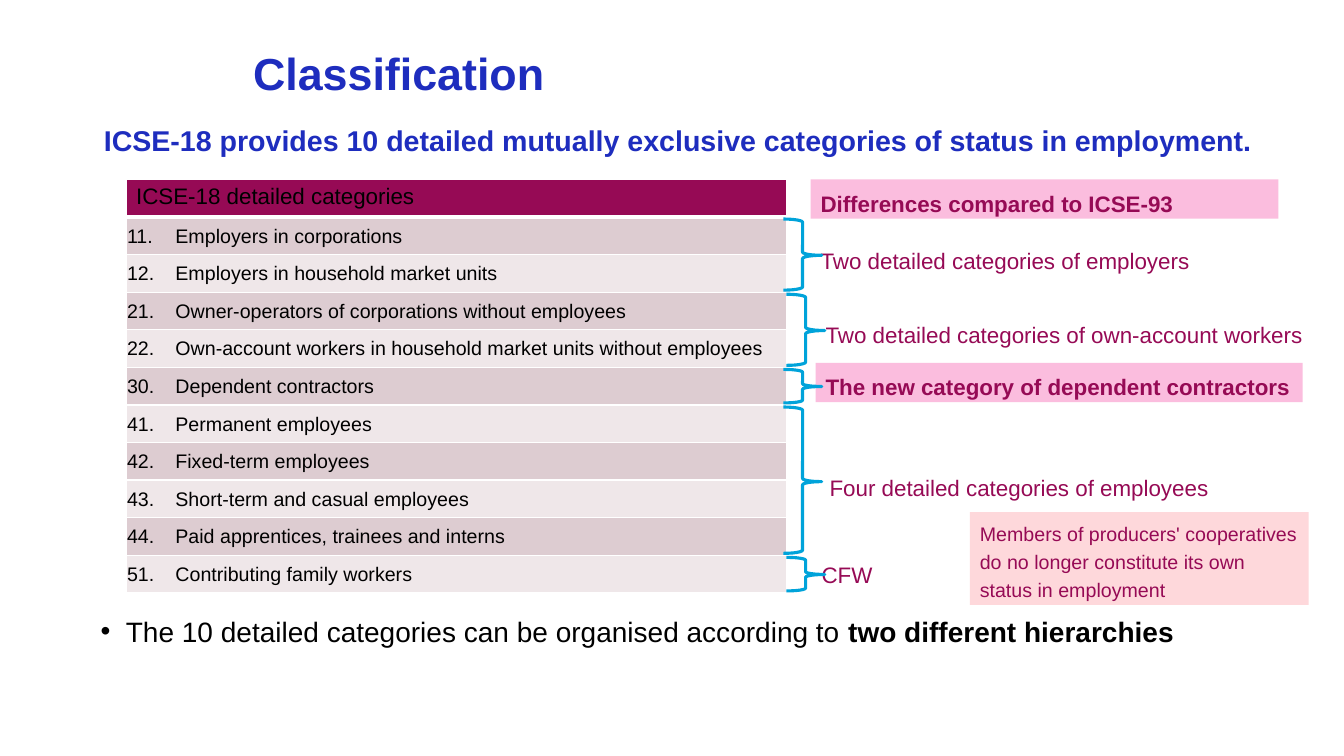
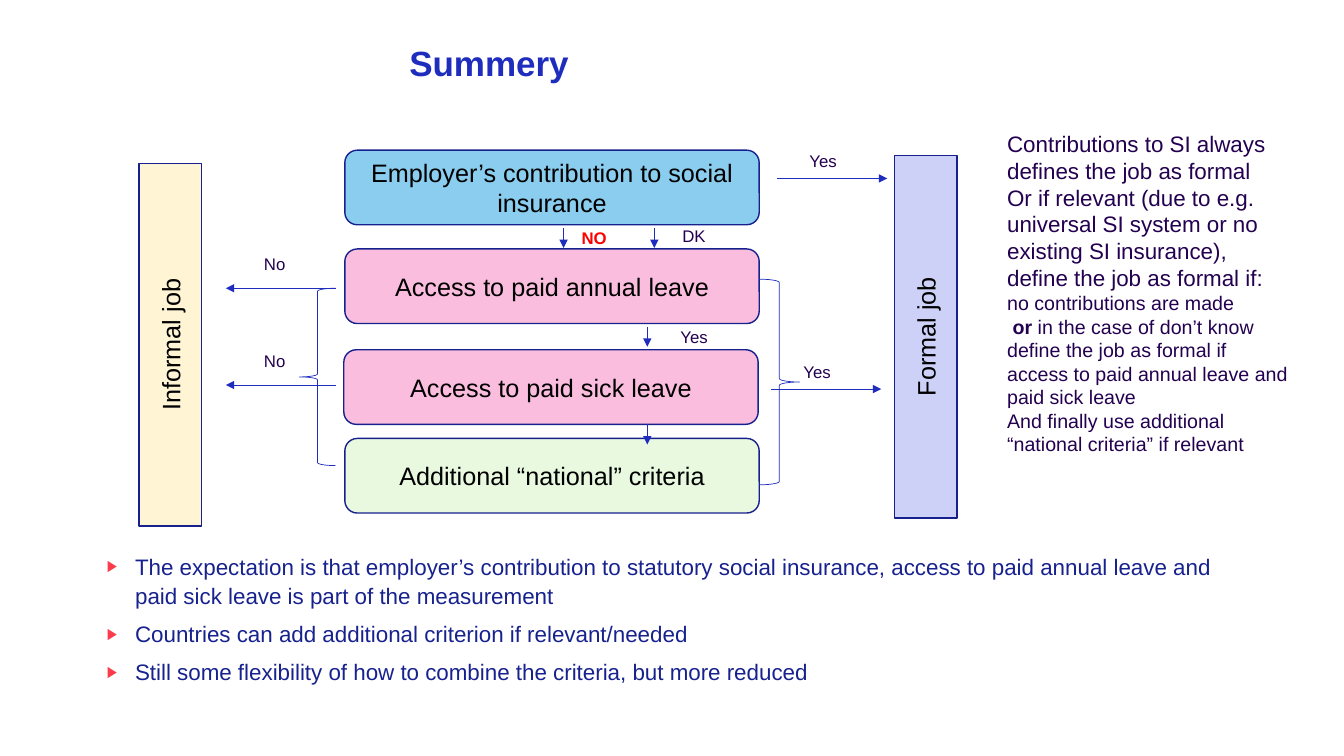
"""Two slides: detailed ICSE-18 categories and the formal job decision flow."""
from lxml import etree
from pptx import Presentation
from pptx.dml.color import RGBColor
from pptx.enum.shapes import MSO_CONNECTOR, MSO_SHAPE as Shape
from pptx.enum.text import MSO_ANCHOR as Anchor, PP_ALIGN as Align
from pptx.oxml.ns import qn
from pptx.util import Inches, Pt

FONT = "Arial"
COLORS = {
    "title": "1E2DBE", "navy": "16218D", "body": "17228E", "ink": "230050",
    "black": "000000", "white": "FFFFFF", "wine": "960A55", "row_odd": "DDCCD1",
    "row_even": "EFE7E9", "pink": "FBBDDE", "rose": "FED8DB", "brace": "00A3DA",
    "blue": "8ACDEE", "green": "E8F9E0", "cream": "FFF5D5", "lilac": "CDD1F7",
    "red": "FF0000", "marker": "FA3C4B",
}
NO_INSETS = (0, 0, 0, 0)
DEFAULT_INSETS = (0.1, 0.05, 0.1, 0.05)

SUBTITLE = "ICSE-18 provides 10 detailed mutually exclusive categories of status in employment."
TABLE_HEADER = "ICSE-18 detailed categories"
CATEGORIES = [
    (11, "Employers in corporations"),
    (12, "Employers in household market units"),
    (21, "Owner-operators of corporations without employees"),
    (22, "Own-account workers in household market units without employees"),
    (30, "Dependent contractors"),
    (41, "Permanent employees"),
    (42, "Fixed-term employees"),
    (43, "Short-term and casual employees"),
    (44, "Paid apprentices, trainees and interns"),
    (51, "Contributing family workers"),
]
TABLE_LEFT, TABLE_TOP, TABLE_WIDTH, ROW = 1.25, 1.78, 6.55, 0.373
GROUPS = [(1, 2, 7.77), (3, 2, 7.8), (5, 1, 7.77), (6, 4, 7.77), (10, 1, 7.8)]
DIFFERENCES = [
    ("Differences compared to ICSE-93", (8.04, 1.78, 4.64, 0.39), "pink", 16),
    ("Two detailed categories of employers", (8.04, 2.35, 4.64, 0.39), None, 16),
    ("Two detailed categories of own-account workers", (8.09, 3.08, 5.2, 0.39), None, 16),
    ("The new category of dependent contractors", (8.09, 3.6, 4.83, 0.39), "pink", 16),
    ("Four detailed categories of employees", (8.13, 4.6, 4.14, 0.39), None, 16),
    ("CFW", (8.05, 5.46, 0.77, 0.39), None, 16),
    ("Members of producers' cooperatives do no longer constitute its own status in employment",
     (9.62, 5.08, 3.36, 0.92), "rose", 14),
]
HIERARCHIES = [("The 10 detailed categories can be organised according to ", False),
               ("two different hierarchies", True)]

CRITERIA = [
    ("Employer’s contribution to social insurance", 3.42, 1.49, "blue"),
    ("Access to paid annual leave", 3.42, 2.47, "pink"),
    ("Access to paid sick leave", 3.41, 3.47, "pink"),
    ("Additional “national” criteria", 3.42, 4.35, "green"),
]
OUTCOMES = [("Informal job", 1.38, 1.62, "cream"), ("Formal job", 8.87, 1.54, "lilac")]
ANSWERS = [("Yes", 7.93, 1.45), ("DK", 6.67, 2.19), ("Yes", 6.65, 3.19),
           ("No", 2.52, 2.47), ("No", 2.52, 3.43), ("Yes", 7.87, 3.54), ("NO", 5.67, 2.21)]
ACROSS, DOWN = 1.09, 0.2
ARROWS = [
    (7.71, 1.77, ACROSS, 0), (7.65, 3.86, ACROSS, 0),
    (3.33, 2.86, -ACROSS, 0), (3.33, 3.82, -ACROSS, 0),
    (5.59, 2.26, 0, DOWN), (6.49, 2.26, 0, DOWN),
    (6.42, 3.24, 0, DOWN), (6.42, 4.21, 0, DOWN),
]
FORMAL_RULES = [
    "Contributions to SI always defines the job as formal",
    "Or if relevant (due to e.g. universal SI system or no existing SI insurance), "
    "define the job as formal if:",
]
FORMAL_STEPS = [
    "no contributions are made",
    [(" ", False), ("or ", True),
     ("in the case of don’t know define the job as formal if access to paid annual leave "
      "and paid sick leave", False)],
    "And finally use additional “national criteria” if relevant",
]
CONCLUSIONS = [
    "The expectation is that employer’s contribution to statutory social insurance, access to "
    "paid annual leave and paid sick leave is part of the measurement",
    "Countries can add additional criterion if relevant/needed",
    "Still some flexibility of how to combine the criteria, but more reduced",
]


def rgb(name):
    return RGBColor.from_string(COLORS[name])


def inches(*lengths):
    return [Inches(length) for length in lengths]


def set_insets(holder, insets):
    (holder.margin_left, holder.margin_top,
     holder.margin_right, holder.margin_bottom) = inches(*insets)


def add_bullet(paragraph, char, indent, color=None, percent=None):
    props = paragraph._p.get_or_add_pPr()
    props.set("marL", str(Inches(indent)))
    props.set("indent", str(-Inches(indent)))
    if color:
        tint = etree.SubElement(props, qn("a:buClr"))
        etree.SubElement(tint, qn("a:srgbClr"), val=COLORS[color])
    if percent:
        etree.SubElement(props, qn("a:buSzPct"), val=str(percent * 1000))
    etree.SubElement(props, qn("a:buFont"), typeface=FONT)
    etree.SubElement(props, qn("a:buChar"), char=char)


def add_tab(paragraph, position):
    tabs = etree.SubElement(paragraph._p.get_or_add_pPr(), qn("a:tabLst"))
    etree.SubElement(tabs, qn("a:tab"), pos=str(Inches(position)), algn="l")


def write(frame, contents, size, color, bold=False, align=None, spacing=None,
          before=0, bullet=None, tab=None):
    for content in contents:
        first = not frame.paragraphs[0].runs
        paragraph = frame.paragraphs[0] if first else frame.add_paragraph()
        if bullet:
            add_bullet(paragraph, *bullet)
        if tab:
            add_tab(paragraph, tab)
        if align:
            paragraph.alignment = align
        if spacing:
            paragraph.line_spacing = spacing
        if before and not first:
            paragraph.space_before = Pt(before)
        font = paragraph.font
        font.name, font.size, font.bold = FONT, Pt(size), bold
        font.color.rgb = rgb(color)
        for text, strong in [(content, bold)] if isinstance(content, str) else content:
            run = paragraph.add_run()
            run.text = text
            if strong != bold:
                run.font.bold = strong


def add_text(slide, box, contents, size, color, insets=DEFAULT_INSETS, **style):
    frame = slide.shapes.add_textbox(*inches(*box)).text_frame
    frame.word_wrap = True
    set_insets(frame, insets)
    write(frame, contents, size, color, **style)
    return frame


def add_shape(slide, kind, box, fill=None, line=None, width=1):
    shape = slide.shapes.add_shape(kind, *inches(*box))
    shape.shadow.inherit = False
    if fill:
        shape.fill.solid()
        shape.fill.fore_color.rgb = rgb(fill)
    else:
        shape.fill.background()
    if line:
        shape.line.color.rgb = rgb(line)
        shape.line.width = Pt(width)
    else:
        shape.line.fill.background()
    shape.text_frame.word_wrap = True
    return shape


def add_arrow(slide, left, top, across, down):
    arrow = slide.shapes.add_connector(
        MSO_CONNECTOR.STRAIGHT, *inches(left, top, left + across, top + down))
    arrow.line.color.rgb = rgb("title")
    arrow.line.width = Pt(0.5)
    etree.SubElement(arrow.line._get_or_add_ln(), qn("a:tailEnd"), type="triangle")
    etree.SubElement(arrow._element.spPr, qn("a:effectLst"))


def add_titled_slide(deck, title, left, top, size):
    slide = deck.slides.add_slide(deck.slide_layouts[6])
    add_text(slide, (left, top, 9, 0.64), [title], size, "title", NO_INSETS,
             bold=True, spacing=0.9)
    return slide


def style_cell(cell, fill, bottom=1):
    props = cell._tc.get_or_add_tcPr()
    for side, width in (("L", 1), ("R", 1), ("T", 1), ("B", bottom)):
        edge = etree.SubElement(props, qn(f"a:ln{side}"), w=str(Pt(width)))
        paint = etree.SubElement(edge, qn("a:solidFill"))
        etree.SubElement(paint, qn("a:srgbClr"), val=COLORS["white"])
    cell.fill.solid()
    cell.fill.fore_color.rgb = rgb(fill)


def add_categories(slide):
    count = len(CATEGORIES) + 1
    table = slide.shapes.add_table(
        count, 1, *inches(TABLE_LEFT, TABLE_TOP, TABLE_WIDTH, count * ROW)).table
    table.first_row = table.horz_banding = False
    for row in table.rows:
        row.height = Inches(ROW)
    header = table.cell(0, 0)
    style_cell(header, "wine", bottom=3)
    write(header.text_frame, [TABLE_HEADER], 16, "black")
    for index, (code, label) in enumerate(CATEGORIES, 1):
        cell = table.cell(index, 0)
        style_cell(cell, "row_odd" if index % 2 else "row_even")
        set_insets(cell, (0.01, 0.01, 0.01, 0))
        cell.vertical_anchor = Anchor.MIDDLE
        write(cell.text_frame, [f"{code}.\t{label}"], 14, "black", tab=0.48)


def build_classification(deck):
    slide = add_titled_slide(deck, "Classification", 2.51, 0.51, 32)
    add_text(slide, (1.03, 1.29, 11.68, 0.51), [SUBTITLE], 20.4, "title", NO_INSETS,
             bold=True, spacing=0.8)
    add_categories(slide)
    for text, box, fill, size in DIFFERENCES:
        if fill:
            add_shape(slide, Shape.RECTANGLE, box, fill)
        add_text(slide, box, [text], size, "wine", bold=fill == "pink", spacing=1.2)
    for first, count, left in GROUPS:
        box = (left, TABLE_TOP + first * ROW + 0.02, 0.38, count * ROW - 0.04)
        brace = add_shape(slide, Shape.RIGHT_BRACE, box, line="brace", width=2.25)
        brace.adjustments[1] = 0.51
    add_text(slide, (0.9, 6.01, 11.53, 0.44), [HIERARCHIES], 20, "black",
             spacing=1.1, bullet=("•", 0.25))


def build_summary(deck):
    slide = add_titled_slide(deck, "Summery", 4.06, 0.46, 25)
    add_text(slide, (1.06, 5.46, 11.05, 1.7), CONCLUSIONS, 16, "body", NO_INSETS,
             spacing=1.1, before=6, bullet=("▶", 0.28, "marker", 70))
    for text, left, top, fill in CRITERIA:
        criterion = add_shape(slide, Shape.ROUNDED_RECTANGLE, (left, top, 4.11, 0.74),
                              fill, "navy")
        write(criterion.text_frame, [text], 18, "black", align=Align.CENTER)
    for text, left, top, fill in OUTCOMES:
        outcome = add_shape(slide, Shape.RECTANGLE, (left, top, 0.62, 3.6), fill, "navy")
        outcome.text_frame._txBody.bodyPr.set("vert", "vert270")
        write(outcome.text_frame, [text], 18, "black", align=Align.CENTER)
    for arrow in ARROWS:
        add_arrow(slide, *arrow)
    for text, left, top in ANSWERS:
        decisive = text == "NO"
        add_text(slide, (left, top, 0.54, 0.3), [text], 12,
                 "red" if decisive else "ink", bold=decisive)
    rules = add_text(slide, (9.89, 1.24, 3.02, 3.37), FORMAL_RULES, 16, "ink")
    write(rules, FORMAL_STEPS, 14, "ink")
    add_shape(slide, Shape.RIGHT_BRACE, (7.53, 2.77, 0.4, 2.04), line="title", width=0.5)
    add_shape(slide, Shape.LEFT_BRACE, (2.97, 2.86, 0.36, 1.76), line="title", width=0.5)


def main():
    deck = Presentation()
    deck.slide_width, deck.slide_height = inches(13.33, 7.5)
    build_classification(deck)
    build_summary(deck)
    deck.save("out.pptx")


if __name__ == "__main__":
    main()
